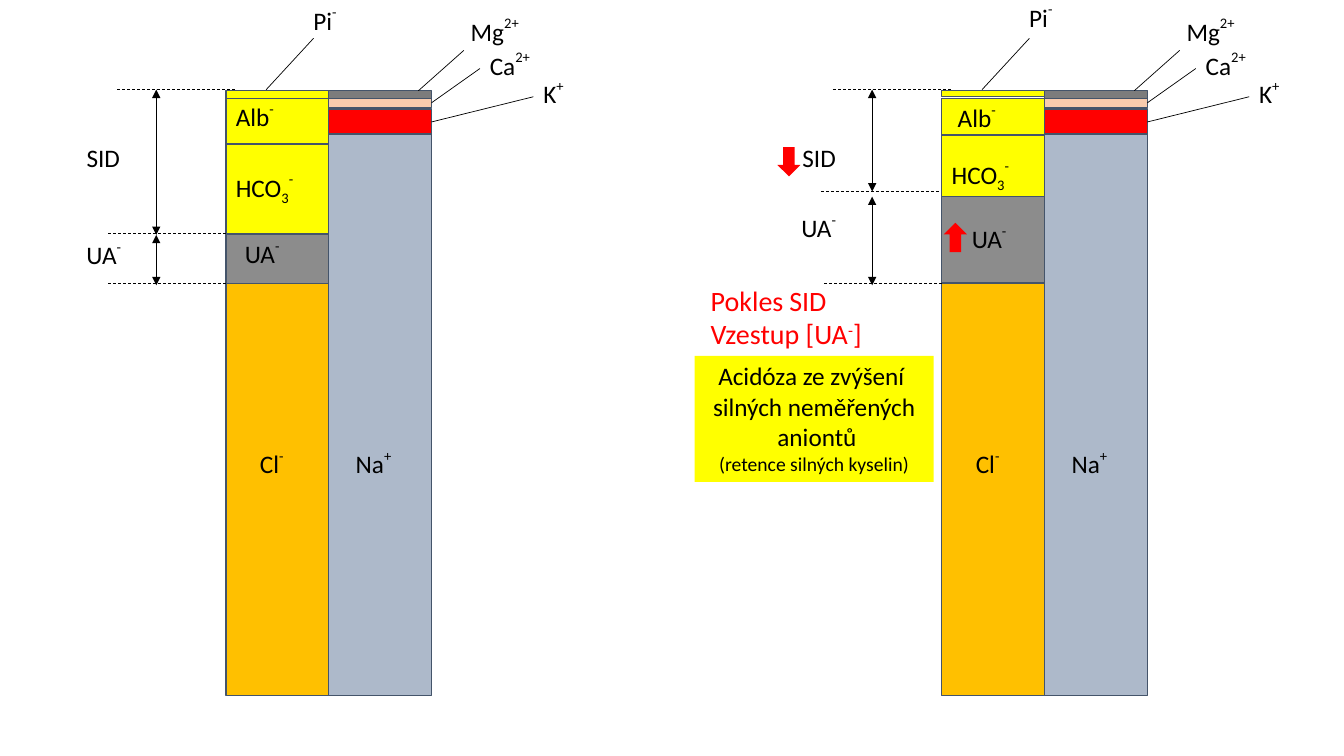
from lxml import etree
from pptx import Presentation, util as u
from pptx.dml.color import RGBColor
from pptx.enum import dml, shapes, text
from pptx.oxml.ns import qn

# Colours
BLACK = RGBColor(0, 0, 0)
RED = RGBColor(0xFF, 0, 0)
YELLOW = RGBColor(0xFF, 0xFF, 0)
AMBER = RGBColor(0xFF, 0xC0, 0)
PEACH = RGBColor(0xF8, 0xCB, 0xAD)
STEEL = RGBColor(0xAD, 0xB9, 0xCA)
NAVY = RGBColor(0x44, 0x54, 0x6A)
DARK = RGBColor(0x7C, 0x7C, 0x7C)
GREY = RGBColor(0x8C, 0x8C, 0x8C)

# Grid: one cell is an inch; both columns of a diagram share these rows
CELL = u.Inches(1)
WIDE = 1.02
TOP, ALB, CL, BASE = 0.9, 0.98, 2.81, 6.9
UP, DOWN = 50, -25


def grid(*cells):
    return [round(n * CELL) for n in cells]


def put(item, **values):
    for name, value in values.items():
        setattr(item, name, value)


def fill(shape, color):
    shape.fill.solid()
    shape.fill.fore_color.rgb = color


def block(tree, kind, box, color, edge=None):
    shape = tree.add_shape(kind, *grid(*box))
    shape.shadow.inherit = False
    fill(shape, color)
    if edge is None:
        shape.line.fill.background()
    else:
        shape.line.color.rgb = edge
        shape.line.width = u.Pt(1)
    return shape


def bar(tree, x, top, end, color):
    block(tree, shapes.MSO_SHAPE.RECTANGLE, (x, top, WIDE, end - top), color, NAVY)


def words(tree, box, lines, color=BLACK, align=text.PP_ALIGN.LEFT, wrap=False):
    """Each line is a list of runs: (words, size, baseline shift in percent)."""
    shape = tree.add_textbox(*grid(*box))
    frame = shape.text_frame
    put(frame, word_wrap=wrap, auto_size=text.MSO_AUTO_SIZE.SHAPE_TO_FIT_TEXT)
    for i, runs in enumerate(lines):
        para = frame.add_paragraph() if i else frame.paragraphs[0]
        para.alignment = align
        for part, size, shift in runs:
            run = para.add_run()
            run.text = part
            put(run.font, name="Calibri", size=u.Pt(size))
            run.font.color.rgb = color
            if shift:
                run.font._element.set("baseline", str(shift * 1000))
    return shape


def ion(tree, x, y, wide, name, sign="", count=""):
    runs = [(name, 18, 0), (count, 18, DOWN), (sign, 18, UP)]
    words(tree, (x, y, wide, 0.5), [[run for run in runs if run[0]]])


def rule(tree, ends, dash=False, heads=False):
    line = tree.add_connector(shapes.MSO_CONNECTOR.STRAIGHT, *grid(*ends))
    line.line.color.rgb = BLACK
    line.line.width = u.Pt(0.5)
    if dash:
        line.line.dash_style = dml.MSO_LINE.DASH
    props = line._element.spPr
    if heads:
        for tag in ("a:headEnd", "a:tailEnd"):
            etree.SubElement(props.find(qn("a:ln")), qn(tag), type="triangle")
    etree.SubElement(props, qn("a:effectLst"))


def diagram(tree, x, pi, hco, ua, mid, gap, pi_y, sid_end, ua_top, tags):
    """One pair of columns; x is the left edge of the anions."""
    right, far = x + WIDE, x + 2 * WIDE

    # Cations, then the outer anions
    for top, end, color in ((1.33, BASE, STEEL), (1.08, 1.33, RED),
                            (0.96, 1.07, PEACH), (TOP, 0.98, DARK)):
        bar(tree, right, top, end, color)
    bar(tree, x, CL, BASE, AMBER)
    bar(tree, x, TOP, pi, YELLOW)

    # Names around and on the columns
    for dx, y, wide, name, sign in (
            (0.77, pi_y, 0.56, "Pi", "-"), (2.33, 0.09, 0.91, "Mg", "2+"),
            (2.52, 0.43, 0.81, "Ca", "2+"), (3.05, 0.71, 0.57, "K", "+"),
            (1.19, 4.38, 0.72, "Na", "+"), (0.24, 4.38, 0.59, "Cl", "-")):
        ion(tree, x + dx, y, wide, name, sign)

    # Inner anions, each grouped with its name
    inner = ((ua, CL, GREY, 0.76, ("UA", "-")),
             (hco, ua, YELLOW, 1.1, ("HCO", "-", "3")),
             (ALB, hco, YELLOW, 0.78, ("Alb", "-")))
    for (top, end, color, wide, name), (dx, y) in zip(inner, tags):
        group = tree.add_group_shape().shapes
        bar(group, x, top, end, color)
        ion(group, x + dx, y, wide, *name)

    # Leaders to the thin layers
    for x1, y1, x2, y2 in ((x + 2.36, 0.5, x + 1.91, TOP),
                           (x + 2.52, 0.68, far, 1.02),
                           (x + 3.05, 0.96, far, 1.21),
                           (x + 0.4, 0.89, x + 0.87, 0.38)):
        rule(tree, (x1, y1, x2, y2))

    # Brackets for SID and UA
    for dx, y in ((gap, mid), (0.09, 0.89), (0, CL)):
        rule(tree, (x + dx, y, x + dx - 1.18, y), dash=True)
    for top, end in ((0.89, sid_end), (ua_top, 2.83)):
        rule(tree, (x - 0.69, top, x - 0.69, end), heads=True)
    ion(tree, x - 1.48, 1.36, 0.75, "SID")


def main():
    deck = Presentation()
    put(deck, slide_width=u.Inches(13.33), slide_height=u.Inches(7.5))
    tree = deck.slides.add_slide(deck.slide_layouts[6]).shapes

    # Normal state on the left, acidosis on the right
    diagram(tree, 2.24, pi=1.0, hco=1.43, ua=2.32, mid=2.32, gap=0, pi_y=-0.02,
            sid_end=2.33, ua_top=2.33, tags=((0.09, 2.3), (0, 1.64), (0, 0.94)))
    ion(tree, 0.76, 2.31, 0.76, "UA", "-")
    diagram(tree, 9.34, pi=0.96, hco=1.34, ua=1.95, mid=1.9, gap=-0.03, pi_y=-0.05,
            sid_end=1.9, ua_top=1.95, tags=((0.2, 2.15), (0, 1.51), (0.06, 0.95)))
    ion(tree, 7.85, 2.04, 0.76, "UA", "-")

    # Diagnosis
    note = words(tree, (6.89, 3.53, 2.37, 1.25),
                 [[("Acidóza ze zvýšení ", 18, 0)], [("silných neměřených", 18, 0)],
                  [(" aniontů", 18, 0)], [("(retence silných kyselin)", 14, 0)]],
                 align=text.PP_ALIGN.CENTER, wrap=True)
    fill(note, YELLOW)
    words(tree, (6.95, 2.76, 1.85, 0.77),
          [[("Pokles", 20, 0), (" ", 18, 0), ("SID", 20, 0)],
           [("Vzestup [UA", 20, 0), ("-", 20, 30), ("]", 20, 0)]], RED)

    # Trend arrows: SID falls, UA rises
    for x, y, turn in ((7.71, 1.46, 0), (9.36, 2.21, 180)):
        arrow = block(tree, shapes.MSO_SHAPE.DOWN_ARROW, (x, y, 0.23, 0.29), RED)
        arrow.rotation = turn

    deck.save("out.pptx")


if __name__ == "__main__":
    main()
